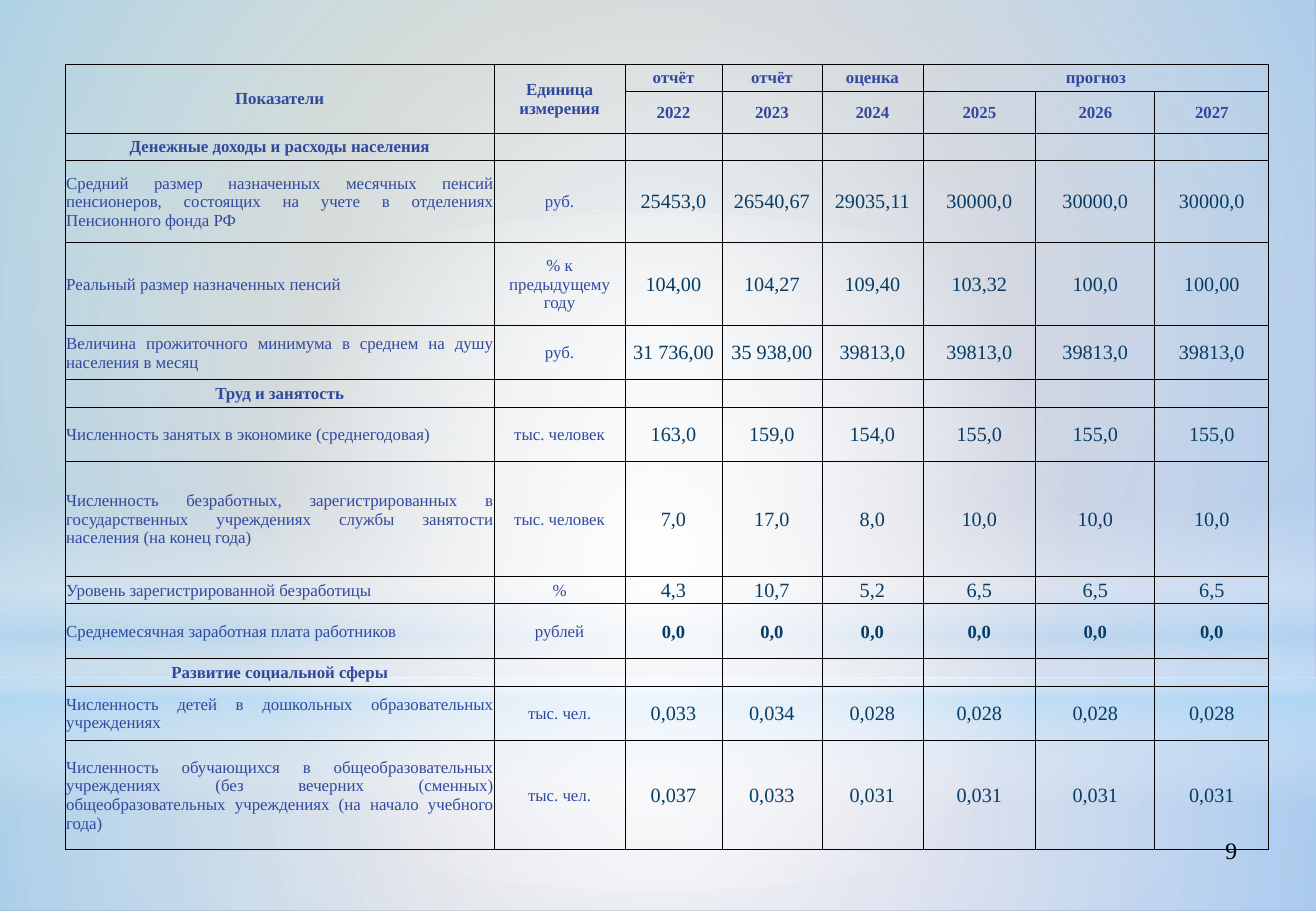
import dataclasses

import lxml.etree
import pptx
import pptx.dml.color
import pptx.enum.shapes
import pptx.enum.text
import pptx.oxml.ns
import pptx.util

Pt = pptx.util.Pt
RGB = pptx.dml.color.RGBColor.from_string
ALIGN = pptx.enum.text.PP_ALIGN
SHAPE = pptx.enum.shapes.MSO_SHAPE
qn = pptx.oxml.ns.qn


@dataclasses.dataclass(frozen=True)
class Theme:
    font: str = "Times New Roman"
    label: str = "31489F"
    value: str = "073C65"
    black: str = "000000"
    white: str = "FFFFFF"
    sky: str = "B4DCFA"
    sage: str = "96AB94"
    violet: str = "8488C4"
    label_size: float = 10
    value_size: float = 12
    wage_size: float = 11
    page_size: float = 14
    border: float = 0.5
    inset: float = 0.7


THEME = Theme()
SLIDE_WIDTH, SLIDE_HEIGHT = 780.48, 540

COLUMN_WIDTHS = [254.4, 77.7, 57.5, 59.3, 59.9, 67, 70.6, 67.6]
ROW_HEIGHTS = [16.2, 22.25, 16.2, 48.9, 48.9, 32.3, 16.3,
               32.3, 68, 16.2, 32.6, 16.2, 32.3, 64.6]

HEADER = [
    ["Показатели", "Единица измерения", "отчёт", "отчёт", "оценка", "прогноз", "", ""],
    ["", "", "2022", "2023", "2024", "2025", "2026", "2027"],
]
WAGES = "Среднемесячная заработная плата работников"

# A row with a single entry is a section heading
INDICATORS = [
    ["Денежные доходы и расходы населения"],
    ["Средний размер назначенных месячных пенсий пенсионеров, состоящих на учете "
     "в отделениях Пенсионного фонда РФ", "руб.",
     "25453,0", "26540,67", "29035,11", "30000,0", "30000,0", "30000,0"],
    ["Реальный размер назначенных пенсий", "% к предыдущему году",
     "104,00", "104,27", "109,40", "103,32", "100,0", "100,00"],
    ["Величина прожиточного минимума в среднем на душу населения в месяц", "руб.",
     "31 736,00", "35 938,00", "39813,0", "39813,0", "39813,0", "39813,0"],
    ["Труд и занятость"],
    ["Численность занятых в экономике (среднегодовая)", "тыс. человек",
     "163,0", "159,0", "154,0", "155,0", "155,0", "155,0"],
    ["Численность безработных, зарегистрированных в государственных учреждениях "
     "службы занятости населения (на конец года)", "тыс. человек",
     "7,0", "17,0", "8,0", "10,0", "10,0", "10,0"],
    ["Уровень зарегистрированной безработицы", "%",
     "4,3", "10,7", "5,2", "6,5", "6,5", "6,5"],
    [WAGES, "рублей"] + ["0,0"] * 6,
    ["Развитие социальной сферы"],
    ["Численность детей в дошкольных образовательных учреждениях", "тыс. чел.",
     "0,033", "0,034", "0,028", "0,028", "0,028", "0,028"],
    ["Численность обучающихся в общеобразовательных учреждениях (без вечерних "
     "(сменных) общеобразовательных учреждениях (на начало учебного года)", "тыс. чел.",
     "0,037", "0,033", "0,031", "0,031", "0,031", "0,031"],
]


def add_child(parent, tag, **attributes):
    child = lxml.etree.SubElement(parent, qn(tag))
    for name, value in attributes.items():
        child.set(name, str(value))
    return child


def paint_gradient(fill, owner, stops, angle=None):
    """Stops are (position %, colour, opacity %); without an angle the gradient is radial."""
    fill.gradient()
    gradient = next(owner.iter(qn("a:gradFill")))
    for child in list(gradient):
        gradient.remove(child)
    stop_list = add_child(gradient, "a:gsLst")
    for position, colour, opacity in stops:
        stop = add_child(stop_list, "a:gs", pos=position * 1000)
        tint = add_child(stop, "a:srgbClr", val=colour)
        if opacity < 100:
            add_child(tint, "a:alpha", val=opacity * 1000)
    if angle is None:
        center = add_child(gradient, "a:path", path="circle")
        add_child(center, "a:fillToRect", l=50000, t=50000, r=50000, b=50000)
    else:
        add_child(gradient, "a:lin", ang=angle * 60000, scaled=0)


def add_glow(slide, kind, top, height, stops, angle=None):
    glow = slide.shapes.add_shape(kind, 0, Pt(top), Pt(SLIDE_WIDTH), Pt(height))
    glow.shadow.inherit = False
    glow.line.fill.background()
    paint_gradient(glow.fill, glow.element.spPr, stops, angle)


def write(frame, text, size, colour, bold=False, align=ALIGN.CENTER):
    paragraph = frame.paragraphs[0]
    paragraph.text = text
    paragraph.alignment = align
    font = paragraph.font
    font.name, font.size, font.bold = THEME.font, Pt(size), bold
    font.color.rgb = RGB(colour)


def format_cell(cell):
    cell.margin_left = cell.margin_right = cell.margin_top = Pt(THEME.inset)
    cell.margin_bottom = 0
    cell.vertical_anchor = pptx.enum.text.MSO_ANCHOR.MIDDLE
    properties = cell._tc.get_or_add_tcPr()
    for side in ("a:lnL", "a:lnR", "a:lnT", "a:lnB"):
        line = add_child(properties, side, w=Pt(THEME.border))
        add_child(add_child(line, "a:solidFill"), "a:srgbClr", val=THEME.black)
    cell.fill.background()


def fill_row(table, row, texts, heading):
    for column in range(len(COLUMN_WIDTHS)):
        cell = table.cell(row, column)
        format_cell(cell)
        text = texts[column] if column < len(texts) else ""
        size, colour, bold, align = THEME.label_size, THEME.label, heading, ALIGN.CENTER
        if not heading and column == 0:
            align = ALIGN.JUSTIFY
        elif not heading and column > 1:
            bold = texts[0] == WAGES
            size = THEME.wage_size if bold else THEME.value_size
            colour = THEME.value
        write(cell.text_frame, text, size, colour, bold, align)


def add_indicator_table(slide):
    rows = HEADER + INDICATORS
    table = slide.shapes.add_table(
        len(rows), len(COLUMN_WIDTHS), Pt(38.6), Pt(37.9),
        Pt(sum(COLUMN_WIDTHS)), Pt(sum(ROW_HEIGHTS))).table
    table.first_row = table.horz_banding = False
    for column, width in zip(table.columns, COLUMN_WIDTHS):
        column.width = Pt(width)
    for index, texts in enumerate(rows):
        table.rows[index].height = Pt(ROW_HEIGHTS[index])
        fill_row(table, index, texts, index < len(HEADER) or len(texts) == 1)
    for column in (0, 1):
        table.cell(0, column).merge(table.cell(1, column))
    table.cell(0, 5).merge(table.cell(0, 7))


def add_backdrop(slide):
    white, sky = THEME.white, THEME.sky
    paint_gradient(slide.background.fill, slide.element,
                   [(0, THEME.sage, 100), (100, THEME.violet, 100)], 45)
    add_glow(slide, SHAPE.RECTANGLE, 401.8, 138.2,
             [(0, white, 91), (37, white, 76), (100, sky, 79)])
    add_glow(slide, SHAPE.RECTANGLE, 0, 401.8,
             [(0, white, 89), (48, white, 62), (100, sky, 79)])
    add_glow(slide, SHAPE.RECTANGLE, 296.6, 180,
             [(0, white, 0), (29, white, 30), (45, sky, 40),
              (55, white, 26), (65, sky, 60), (100, white, 0)], 90)
    add_glow(slide, SHAPE.OVAL, 126, 401.8, [(0, white, 100), (56, white, 0)])


def add_page_number(slide):
    frame = slide.shapes.add_textbox(Pt(558.7), Pt(491.8), Pt(182.2), Pt(37.4)).text_frame
    frame.word_wrap = True
    write(frame, "9", THEME.page_size, THEME.black, align=ALIGN.RIGHT)


def main():
    deck = pptx.Presentation()
    deck.slide_width, deck.slide_height = Pt(SLIDE_WIDTH), Pt(SLIDE_HEIGHT)
    slide = deck.slides.add_slide(deck.slide_layouts[6])
    add_backdrop(slide)
    add_page_number(slide)
    add_indicator_table(slide)
    deck.save("out.pptx")


if __name__ == "__main__":
    main()
